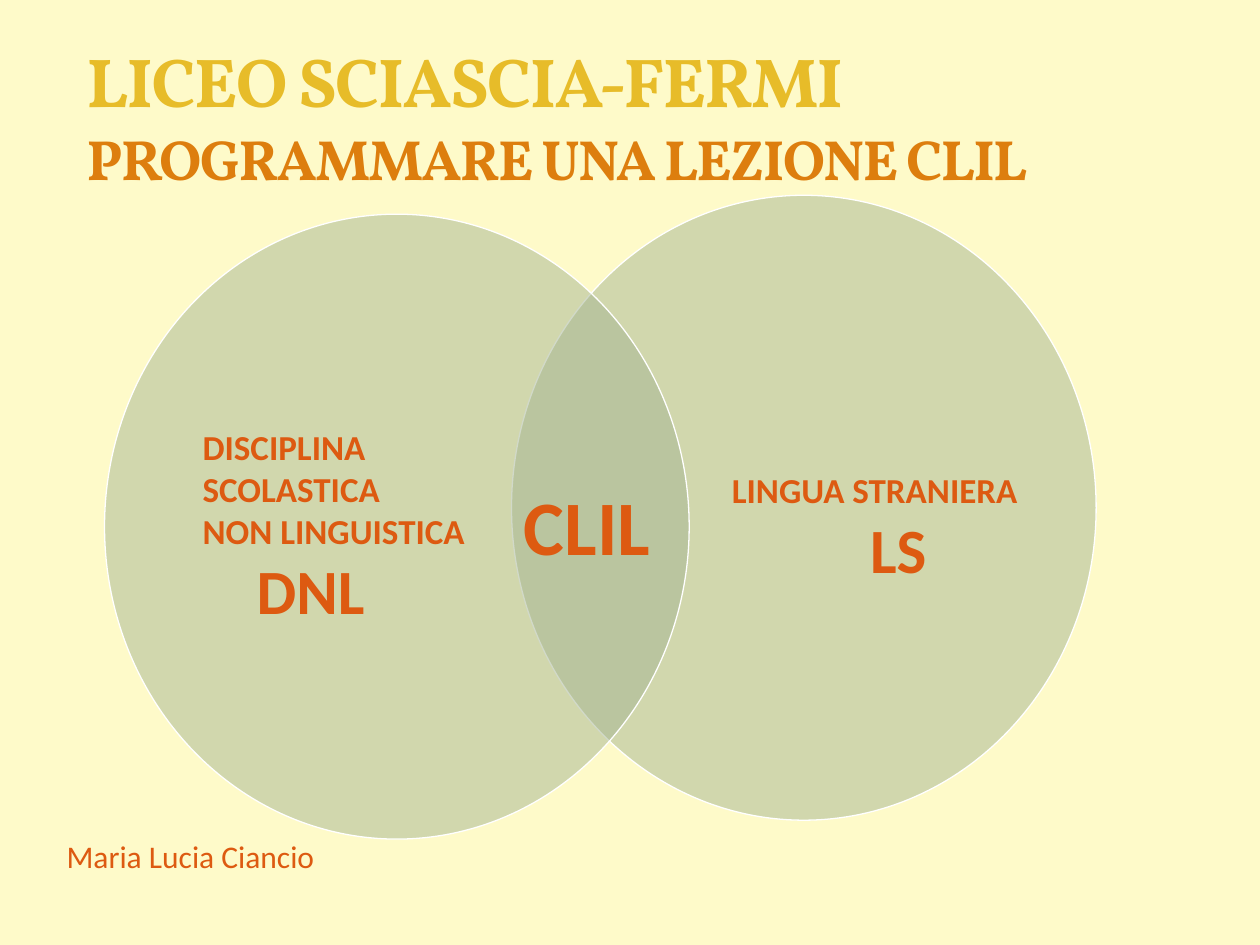
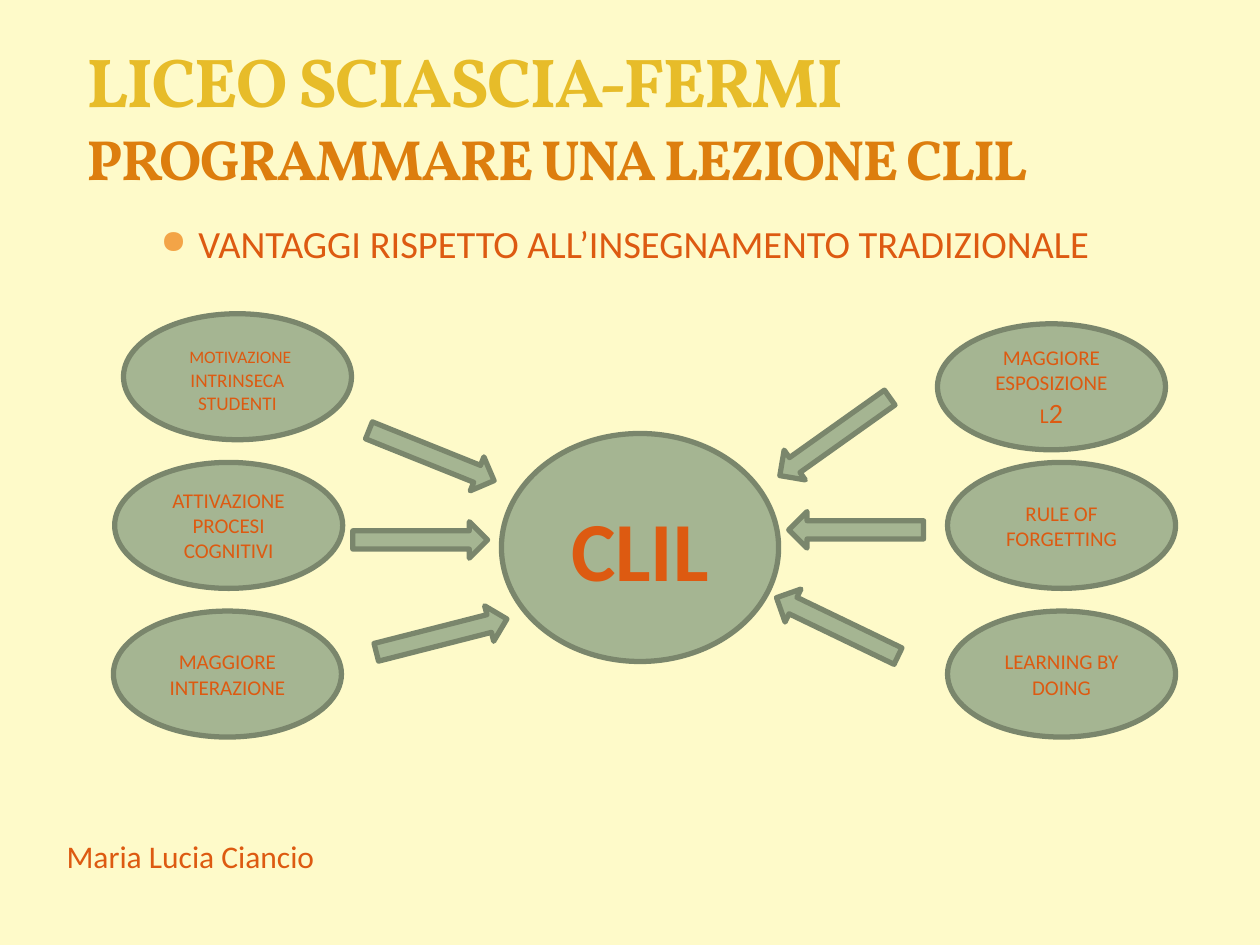
from lxml import etree
from pptx import Presentation
from pptx.dml.color import RGBColor
from pptx.enum.shapes import MSO_SHAPE
from pptx.enum.text import MSO_ANCHOR, PP_ALIGN
from pptx.oxml.ns import qn
from pptx.util import Inches, Pt

ELLIPSE, ARROW = MSO_SHAPE.OVAL, MSO_SHAPE.RIGHT_ARROW
TOP, MIDDLE, BOTTOM = MSO_ANCHOR.TOP, MSO_ANCHOR.MIDDLE, MSO_ANCHOR.BOTTOM
LEFT, CENTER = PP_ALIGN.LEFT, PP_ALIGN.CENTER

CREAM = RGBColor(0xFE, 0xFA, 0xC9)
GOLD = RGBColor(0xE7, 0xBC, 0x29)
ORANGE = RGBColor(0xDD, 0x7E, 0x0E)
RUST = RGBColor(0xDD, 0x5A, 0x11)
SAGE = RGBColor(0xA5, 0xB5, 0x92)
MOSS = RGBColor(0x7A, 0x86, 0x6C)
WHITE = RGBColor(0xFF, 0xFF, 0xFF)
BULLET = "F3A447"
BODY_FONT, TITLE_FONT = "Calibri", "Vollkorn"


def write(shape, paragraphs, align=LEFT, anchor=TOP, bold=False, wrap=True):
    """Each paragraph is a list of (text, size) runs."""
    tf = shape.text_frame
    tf.word_wrap = wrap
    tf.vertical_anchor = anchor
    for i, runs in enumerate(paragraphs):
        p = tf.paragraphs[0] if i == 0 else tf.add_paragraph()
        p.alignment = align
        for text, size in runs:
            r = p.add_run()
            r.text = text
            r.font.name = BODY_FONT
            r.font.size = Pt(size)
            r.font.bold = bold
            r.font.color.rgb = RUST
    return tf


def add_text(s, x, y, w, h, paragraphs, **style):
    box = s.shapes.add_textbox(Inches(x), Inches(y), Inches(w), Inches(h))
    return write(box, paragraphs, **style)


def add_figure(s, kind, x, y, w, h, line=MOSS, weight=3):
    sp = s.shapes.add_shape(kind, Inches(x), Inches(y), Inches(w), Inches(h))
    sp.shadow.inherit = False
    sp.fill.solid()
    sp.fill.fore_color.rgb = SAGE
    sp.line.color.rgb = line
    sp.line.width = Pt(weight)
    return sp


def add_set_circle(s, x, y):
    sp = add_figure(s, ELLIPSE, x, y, 4.64, 4.96, WHITE, 0.75)
    color = sp.fill._xPr.find(qn("a:solidFill"))[0]
    etree.SubElement(color, qn("a:alpha"), val="50000")
    return sp


def add_bullet(p):
    pPr = p._p.get_or_add_pPr()
    pPr.set("marL", str(Inches(0.3)))
    pPr.set("indent", str(Inches(-0.3)))
    color = etree.SubElement(pPr, qn("a:buClr"))
    etree.SubElement(color, qn("a:srgbClr"), val=BULLET)
    etree.SubElement(pPr, qn("a:buSzPct"), val="85000")
    etree.SubElement(pPr, qn("a:buChar"), char="●")


def add_base_slide(prs):
    s = prs.slides.add_slide(prs.slide_layouts[6])
    s.background.fill.solid()
    s.background.fill.fore_color.rgb = CREAM
    tf = add_text(s, 0.59, 0.2, 9, 1.32,
                  [[("LICEO SCIASCIA-FERMI", 39.6)],
                   [("PROGRAMMARE UNA LEZIONE CLIL", 32.4)]],
                  anchor=BOTTOM, bold=True)
    tf.margin_bottom = 0
    for p, color in zip(tf.paragraphs, (GOLD, ORANGE)):
        p.line_spacing = Pt(40)
        font = p.runs[0].font
        font.name = TITLE_FONT
        font.color.rgb = color
        font._element.set("spc", "-100")
    add_text(s, 0.43, 6.59, 2.51, 0.4, [[("Maria Lucia Ciancio", 18)]], wrap=False)
    return s


def build_venn(prs):
    s = add_base_slide(prs)
    add_set_circle(s, 4.06, 1.55)
    subject = add_set_circle(s, 0.83, 1.7)
    tf = write(subject, [[("DISCIPLINA", 20)], [("SCOLASTICA", 20)],
                         [("NON LINGUISTICA", 20)], [("DNL", 36)]],
               anchor=MIDDLE, bold=True)
    tf.paragraphs[-1]._p.get_or_add_pPr().set("marL", str(Inches(0.43)))
    add_text(s, 4.06, 3.75, 1.34, 0.84, [[("CLIL", 44)]], bold=True, wrap=False)
    tf = add_text(s, 5.71, 3.67, 2.84, 1.04,
                  [[("LINGUA STRANIERA", 20)], [("LS", 36)]], bold=True)
    tf.paragraphs[1].alignment = CENTER


def build_advantages(prs):
    s = add_base_slide(prs)
    tf = add_text(s, 0.46, 1.7, 9, 0.5,
                  [[("VANTAGGI RISPETTO ALL’INSEGNAMENTO TRADIZIONALE", 22)]],
                  align=CENTER)
    add_bullet(tf.paragraphs[0])

    hub = add_figure(s, ELLIPSE, 3.98, 3.44, 2.2, 1.81)
    write(hub, [[("CLIL", 48)]], align=CENTER, anchor=MIDDLE, bold=True)

    arrows = [(2.89, 3.47, 21.9), (2.8, 4.14, 0), (2.97, 4.9, 345.7),
              (6.09, 3.32, 144.6), (6.26, 4.06, 180), (6.11, 4.83, 205.7)]
    for x, y, angle in arrows:
        add_figure(s, ARROW, x, y, 1.07, 0.29).rotation = angle

    advantages = [
        (0.98, 2.49, [[(" ", 14), ("MOTIVAZIONE ", 10), ("INTRINSECA STUDENTI", 11)]]),
        (0.91, 3.67, [[("ATTIVAZIONE PROCESI COGNITIVI", 12)]]),
        (0.9, 4.85, [[("MAGGIORE", 12)], [("INTERAZIONE", 12)]]),
        (7.44, 2.57, [[("MAGGIORE ESPOSIZIONE", 12)], [("L", 12), ("2", 16)]]),
        (7.52, 3.67, [[("RULE OF FORGETTING", 12)]]),
        (7.52, 4.85, [[("LEARNING BY DOING", 12)]]),
    ]
    for x, y, paragraphs in advantages:
        sp = add_figure(s, ELLIPSE, x, y, 1.81, 1)
        write(sp, paragraphs, align=CENTER, anchor=MIDDLE)


def main():
    prs = Presentation()
    prs.slide_width, prs.slide_height = Inches(10), Inches(7.5)
    build_venn(prs)
    build_advantages(prs)
    prs.save("out.pptx")


if __name__ == "__main__":
    main()
